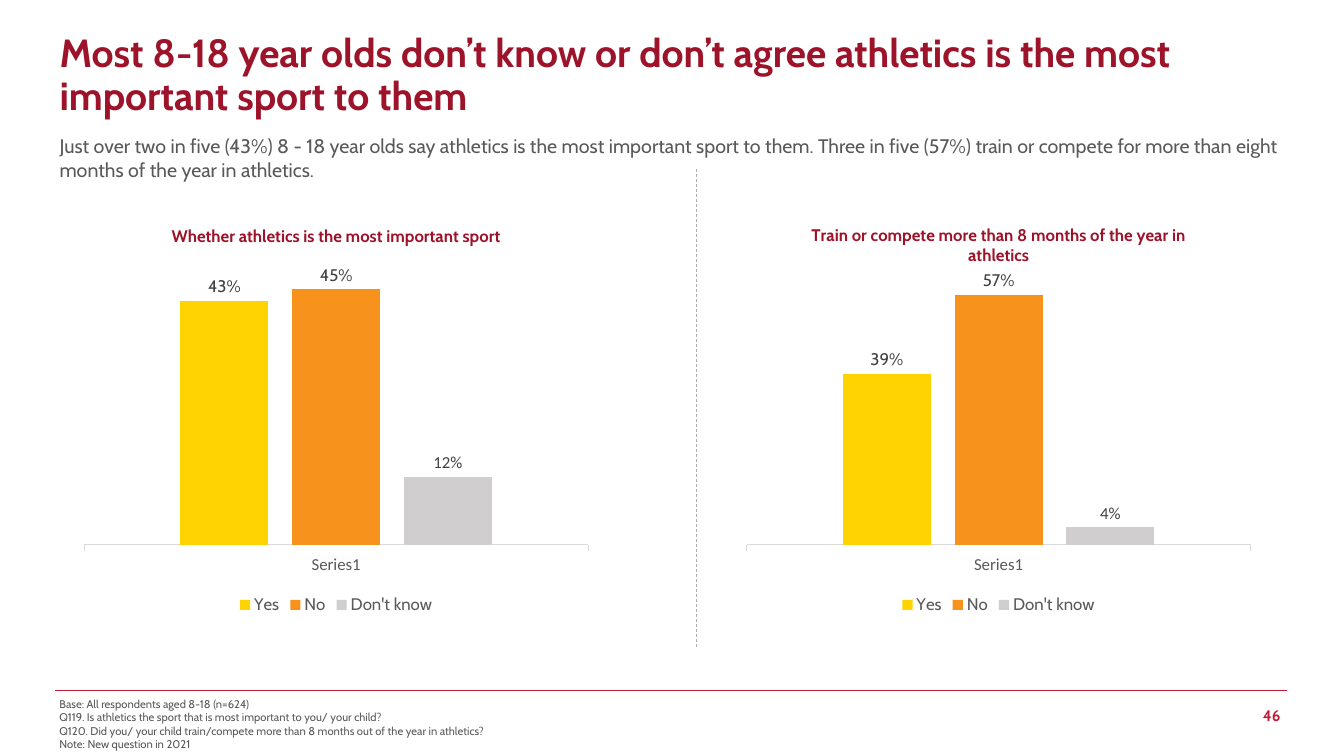
from dataclasses import dataclass

from lxml.etree import SubElement
from pptx import Presentation
from pptx.chart.data import CategoryChartData
from pptx.dml.color import RGBColor
from pptx.enum.chart import XL_CHART_TYPE, XL_LABEL_POSITION, XL_LEGEND_POSITION, XL_TICK_MARK
from pptx.enum.dml import MSO_LINE
from pptx.enum.shapes import MSO_CONNECTOR
from pptx.enum.text import MSO_ANCHOR, MSO_AUTO_SIZE, PP_ALIGN
from pptx.oxml.ns import qn
from pptx.util import Inches, Pt

CRIMSON, RED = "9C132A", "BE1D37"
GREY, DARK_GREY, AXIS_GREY, DIVIDER_GREY = "595959", "404040", "D9D9D9", "AFABAB"
WHITE = "FFFFFF"


@dataclass(frozen=True)
class Answer:
    name: str
    color: str
    label_font: str = "Cabin"


@dataclass(frozen=True)
class SurveyChart:
    title: str
    left: float
    values: tuple[float, ...]
    axis_maximum: float
    plot_top: float


@dataclass(frozen=True)
class Rule:
    start: tuple[float, float]
    end: tuple[float, float]
    color: str
    width: float
    dash: MSO_LINE | None = None


ANSWERS = (
    Answer("Yes", "FFD300"),
    Answer("No", "F7931D"),
    Answer("Don't know", "D0CECE", "Calibri"),
)
CHARTS = (
    SurveyChart("Whether athletics is the most important sport", 0.73, (0.43, 0.45, 0.12), 0.5, 0.13),
    SurveyChart("Train or compete more than 8 months of the year in athletics", 7.3,
                (0.39, 0.57, 0.04), 0.6, 0.18),
)
RULES = (
    Rule((0.55, 6.85), (12.76, 6.85), RED, 1),
    Rule((6.91, 1.68), (6.91, 6.43), DIVIDER_GREY, 0.5, MSO_LINE.DASH),
)
PLOT_BOTTOM = 0.82
NOTES = (
    "Base: All respondents aged 8-18 (n=624)\n"
    "Q119. Is athletics the sport that is most important to you/ your child?\n"
    "Q120. Did you/ your child train/compete more than 8 months out of the year in athletics?\n"
    "Note: New question in 2021"
)


def rgb(color: str) -> RGBColor:
    return RGBColor.from_string(color)


def set_font(font, size: float, color: str, name: str = "Cabin", bold: bool = False) -> None:
    font.size, font.name, font.bold = Pt(size), name, bold
    font.color.rgb = rgb(color)


def write_text(box, text: str, *, at: tuple[float, float, float, float], size: float, color: str,
               bold: bool = False, align: PP_ALIGN = PP_ALIGN.LEFT,
               anchor: MSO_ANCHOR = MSO_ANCHOR.TOP, line_spacing: float = 1.0) -> None:
    """Place a box or placeholder and fill it with one paragraph per line."""
    box.left, box.top, box.width, box.height = map(Inches, at)
    frame = box.text_frame
    frame.word_wrap, frame.auto_size = True, MSO_AUTO_SIZE.NONE
    frame.vertical_anchor = anchor
    frame.text = text
    for para in frame.paragraphs:
        para.alignment, para.line_spacing = align, line_spacing
        para.space_before = Pt(0)
        for span in para.runs:
            set_font(span.font, size, color, bold=bold)


def remove_bullet(para) -> None:
    properties = para._p.get_or_add_pPr()
    properties.set("marL", "0")
    properties.set("indent", "0")
    SubElement(properties, qn("a:buNone"))


def add_rule(page, rule: Rule) -> None:
    line = page.shapes.add_connector(
        MSO_CONNECTOR.STRAIGHT, *map(Inches, rule.start + rule.end))
    line.line.color.rgb = rgb(rule.color)
    line.line.width = Pt(rule.width)
    if rule.dash:
        line.line.dash_style = rule.dash
    SubElement(line._element.spPr, qn("a:effectLst"))


def set_plot_layout(chart, top: float) -> None:
    """Fix the inner plot area, in fractions of the chart."""
    plot_area = chart._chartSpace.chart.plotArea
    layout = plot_area.find(qn("c:layout"))
    if layout is None:
        layout = SubElement(plot_area, qn("c:layout"))
        plot_area.insert(0, layout)
    manual = SubElement(layout, qn("c:manualLayout"))
    settings = {"layoutTarget": "inner", "xMode": "edge", "yMode": "edge",
                "x": 0.02, "y": top, "w": 0.96, "h": round(PLOT_BOTTOM - top, 2)}
    for tag, value in settings.items():
        SubElement(manual, qn(f"c:{tag}")).set("val", str(value))


def add_survey_chart(page, survey: SurveyChart) -> None:
    data = CategoryChartData(number_format="0%")
    data.categories = ["Series1"]
    for answer, value in zip(ANSWERS, survey.values):
        data.add_series(answer.name, [value])
    chart = page.shapes.add_chart(
        XL_CHART_TYPE.COLUMN_CLUSTERED, Inches(survey.left), Inches(2.06),
        Inches(5.21), Inches(4.08), data).chart
    set_font(chart.font, 10, "000000", "Calibri")

    chart.has_title = True
    chart.chart_title.include_in_layout = False
    title = chart.chart_title.text_frame
    title.text = survey.title
    set_font(title.paragraphs[0].runs[0].font, 12, CRIMSON, bold=True)

    chart.has_legend = True
    chart.legend.position = XL_LEGEND_POSITION.BOTTOM
    chart.legend.include_in_layout = False
    set_font(chart.legend.font, 12, GREY)

    category_axis, value_axis = chart.category_axis, chart.value_axis
    category_axis.major_tick_mark = XL_TICK_MARK.OUTSIDE
    category_axis.format.line.color.rgb = rgb(AXIS_GREY)
    category_axis.format.line.width = Pt(0.75)
    set_font(category_axis.tick_labels.font, 12, GREY, "Calibri")
    value_axis.visible = value_axis.has_major_gridlines = False
    value_axis.minimum_scale, value_axis.maximum_scale = 0, survey.axis_maximum

    plot = chart.plots[0]
    plot.gap_width, plot.overlap, plot.vary_by_categories = 219, -27, False
    for answer, series in zip(ANSWERS, plot.series):
        series.format.fill.solid()
        series.format.fill.fore_color.rgb = rgb(answer.color)
        labels = series.data_labels
        labels.show_value = True
        labels.position = XL_LABEL_POSITION.OUTSIDE_END
        set_font(labels.font, 12, DARK_GREY, answer.label_font)
    set_plot_layout(chart, survey.plot_top)


def add_text_box(page):
    return page.shapes.add_textbox(0, 0, 0, 0)


def main() -> None:
    deck = Presentation()
    deck.slide_width, deck.slide_height = Inches(13.33), Inches(7.5)
    page = deck.slides.add_slide(deck.slide_layouts[1])

    write_text(page.shapes.title,
               "Most 8-18 year olds don’t know or don’t agree athletics is the most important sport to them",
               at=(0.49, 0.29, 11.46, 0.93), size=28, color=CRIMSON, bold=True,
               anchor=MSO_ANCHOR.MIDDLE, line_spacing=0.9)
    summary = page.placeholders[1]
    write_text(summary,
               "Just over two in five (43%) 8 - 18 year olds say athletics is the most important sport "
               "to them. Three in five (57%) train or compete for more than eight months of the year "
               "in athletics.",
               at=(0.49, 1.28, 12.46, 0.57), size=14, color=GREY)
    remove_bullet(summary.text_frame.paragraphs[0])

    for survey in CHARTS:
        add_survey_chart(page, survey)

    notes = add_text_box(page)
    write_text(notes, NOTES, at=(0.49, 6.9, 9.18, 0.6), size=8, color=GREY, anchor=MSO_ANCHOR.BOTTOM)
    notes.fill.solid()
    notes.fill.fore_color.rgb = rgb(WHITE)
    write_text(add_text_box(page), "46", at=(10.44, 6.96, 2.36, 0.26), size=11, color=RED,
               bold=True, align=PP_ALIGN.RIGHT)
    for rule in RULES:
        add_rule(page, rule)

    deck.save("out.pptx")


if __name__ == "__main__":
    main()
